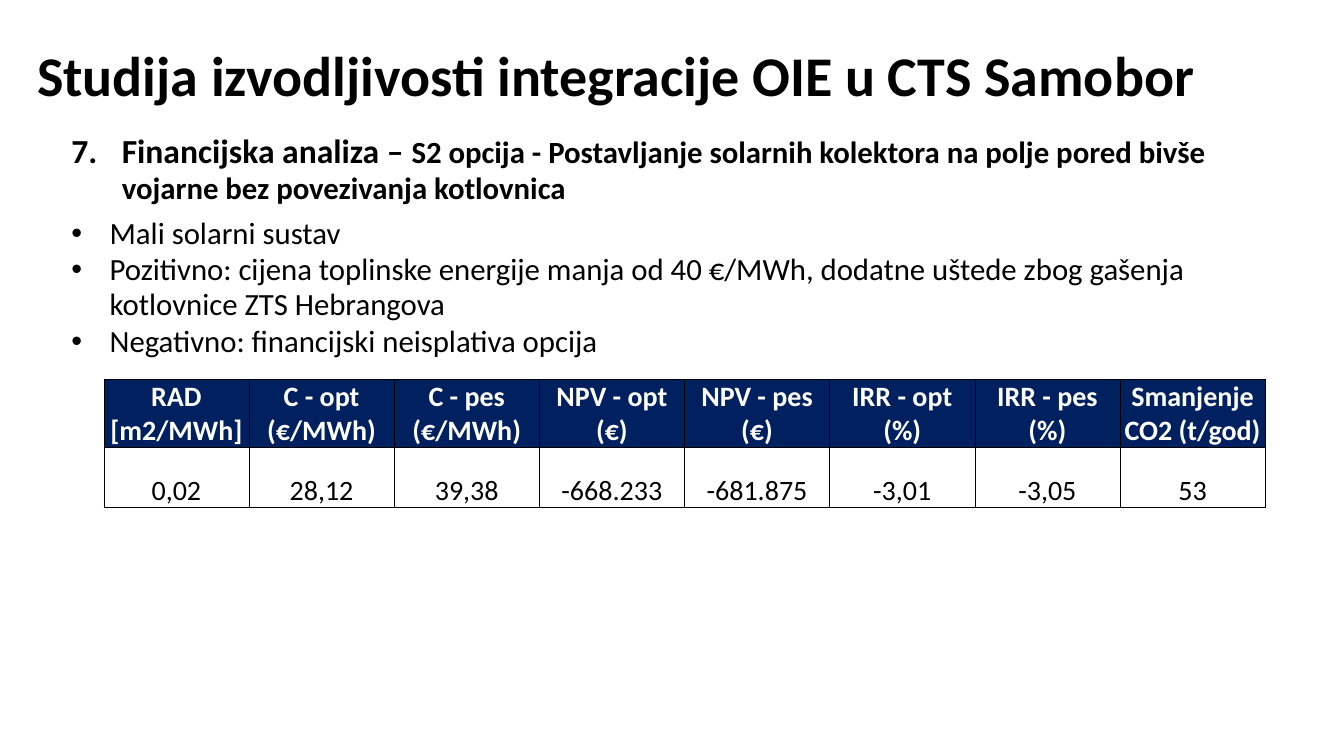
from dataclasses import dataclass

from lxml import etree
from pptx import Presentation
from pptx.dml.color import RGBColor
from pptx.enum.text import MSO_ANCHOR, PP_ALIGN
from pptx.oxml.ns import qn
from pptx.util import Pt

PX = 9144  # EMU per px, 100 px to the inch
TOP, MIDDLE, BOTTOM = MSO_ANCHOR.TOP, MSO_ANCHOR.MIDDLE, MSO_ANCHOR.BOTTOM
LEFT, CENTER = PP_ALIGN.LEFT, PP_ALIGN.CENTER


@dataclass(frozen=True)
class Theme:
    font: str = "Calibri"
    black: str = "000000"
    white: str = "FFFFFF"
    navy: str = "002060"
    title_size: int = 40
    heading_size: int = 24
    body_size: int = 22
    table_size: int = 20
    border_width: float = 0.5


THEME = Theme()

TITLE = "Studija izvodljivosti integracije OIE u CTS Samobor"
HEADING = "Financijska analiza – "
OPTION = ("S2 opcija - Postavljanje solarnih kolektora na polje pored bivše "
          "vojarne bez povezivanja kotlovnica")
BULLETS = [
    "Mali solarni sustav",
    "Pozitivno: cijena toplinske energije manja od 40 €/MWh, dodatne uštede "
    "zbog gašenja kotlovnice ZTS Hebrangova",
    "Negativno: financijski neisplativa opcija",
]
RESULTS = [
    ("RAD [m2/MWh]", "0,02"),
    ("C - opt (€/MWh)", "28,12"),
    ("C - pes (€/MWh)", "39,38"),
    ("NPV - opt (€)", "-668.233"),
    ("NPV - pes (€)", "-681.875"),
    ("IRR - opt (%)", "-3,01"),
    ("IRR - pes (%)", "-3,05"),
    ("Smanjenje CO2 (t/god)", "53"),
]


def write(para, text, *, size, bold=False, color=THEME.black):
    span = para.add_run()
    span.text = text
    span.font.name = THEME.font
    span.font.size = Pt(size)
    span.font.bold = bold
    span.font.color.rgb = RGBColor.from_string(color)


def format_paragraph(para, *, align=LEFT, spacing=1.0, before=0, after=0):
    para.alignment = align
    para.line_spacing = spacing
    para.space_before = Pt(before)
    para.space_after = Pt(after)


def add_marker(para, tag, *, margin, hanging, **attributes):
    """Give a paragraph a bullet or number with a hanging indent."""
    properties = para._p.get_or_add_pPr()
    properties.set("marL", str(margin * PX))
    properties.set("indent", str(-hanging * PX))
    if tag == "a:buChar":
        etree.SubElement(properties, qn("a:buFont"), typeface="Arial")
    etree.SubElement(properties, qn(tag), **attributes)


def add_text_frame(page, left, top, width, height, anchor):
    box = page.shapes.add_textbox(left * PX, top * PX, width * PX, height * PX)
    frame = box.text_frame
    frame.word_wrap = True
    frame.vertical_anchor = anchor
    return frame


def add_title(page):
    para = add_text_frame(page, 27, 5, 1287, 145, MIDDLE).paragraphs[0]
    format_paragraph(para, spacing=0.9)
    write(para, TITLE, size=THEME.title_size, bold=True)


def add_body(page):
    frame = add_text_frame(page, 60, 127, 1240, 514, TOP)

    # Numbered heading
    para = frame.paragraphs[0]
    format_paragraph(para, spacing=0.95, after=6)
    add_marker(para, "a:buAutoNum", margin=51, hanging=50,
               type="arabicPeriod", startAt="7")
    write(para, HEADING, size=THEME.heading_size, bold=True)
    write(para, OPTION, size=THEME.body_size, bold=True)

    # Bulleted remarks
    for text in BULLETS:
        para = frame.add_paragraph()
        format_paragraph(para, spacing=0.95, before=1)
        add_marker(para, "a:buChar", margin=39, hanging=38, char="•")
        write(para, text, size=THEME.body_size)


def add_borders(cell):
    properties = cell._tc.get_or_add_tcPr()
    for index, side in enumerate(("lnL", "lnR", "lnT", "lnB")):
        line = etree.Element(qn(f"a:{side}"), w=str(Pt(THEME.border_width)))
        fill = etree.SubElement(line, qn("a:solidFill"))
        etree.SubElement(fill, qn("a:srgbClr"), val=THEME.black)
        properties.insert(index, line)


def fill_cell(cell, text, *, header):
    cell.margin_left = cell.margin_right = cell.margin_top = PX
    cell.margin_bottom = 0
    cell.vertical_anchor = BOTTOM
    if header:
        cell.fill.solid()
        cell.fill.fore_color.rgb = RGBColor.from_string(THEME.navy)
    else:
        cell.fill.background()
    add_borders(cell)
    para = cell.text_frame.paragraphs[0]
    format_paragraph(para, align=CENTER)
    write(para, text, size=THEME.table_size, bold=header,
          color=THEME.white if header else THEME.black)


def add_results_table(page):
    column_width, row_heights = 144, (66, 60)
    table = page.shapes.add_table(
        len(row_heights), len(RESULTS), 103 * PX, 376 * PX,
        column_width * len(RESULTS) * PX, sum(row_heights) * PX).table
    table.horz_banding = False
    for row, height in zip(table.rows, row_heights):
        row.height = height * PX
    for column, texts in enumerate(RESULTS):
        table.columns[column].width = column_width * PX
        for row, text in enumerate(texts):
            fill_cell(table.cell(row, column), text, header=row == 0)


def main():
    deck = Presentation()
    deck.slide_width = 1333 * PX
    deck.slide_height = 750 * PX
    page = deck.slides.add_slide(deck.slide_layouts[6])
    add_title(page)
    add_body(page)
    add_results_table(page)
    deck.save("out.pptx")


if __name__ == "__main__":
    main()
